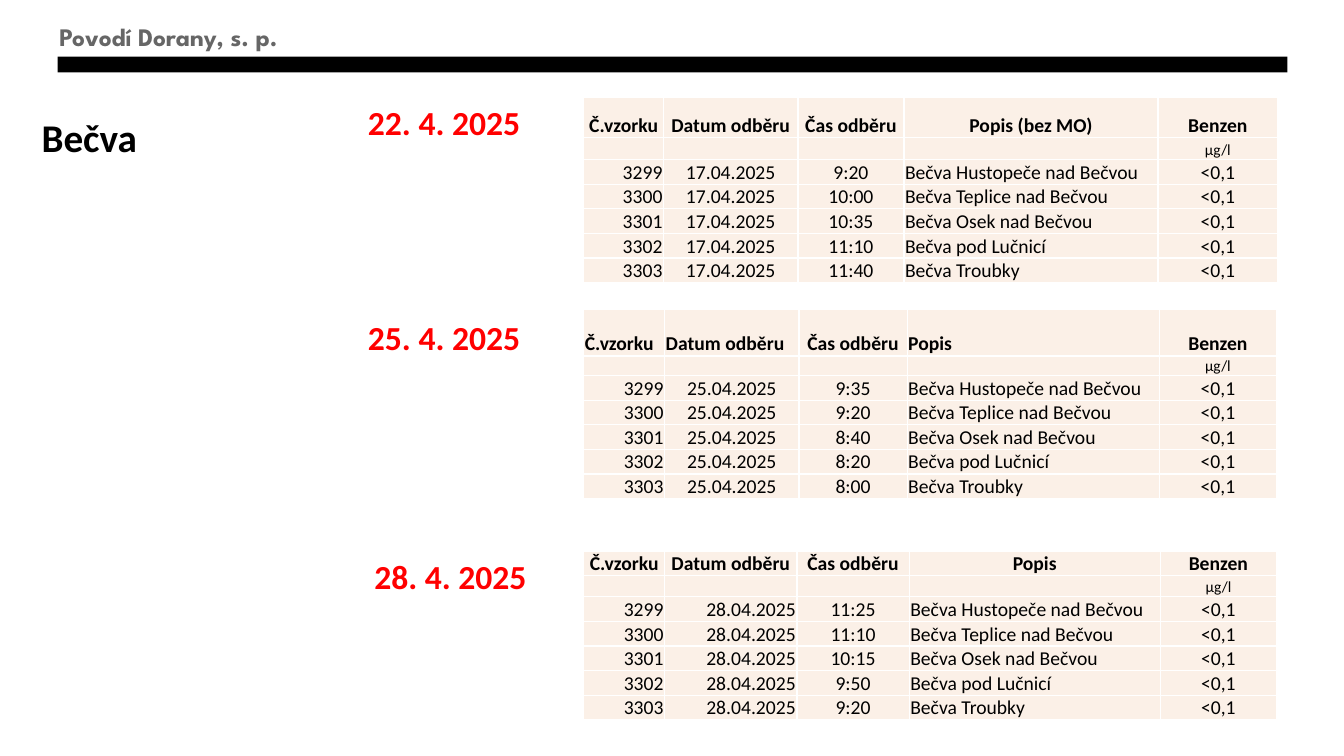
import pptx
import pptx.dml.color
import pptx.enum.shapes
import pptx.enum.text
import pptx.util
from lxml import etree

PX = 9525  # EMU in one px
NS = "{http://schemas.openxmlformats.org/drawingml/2006/main}"
ALIGN = {
    "l": pptx.enum.text.PP_ALIGN.LEFT,
    "c": pptx.enum.text.PP_ALIGN.CENTER,
    "r": pptx.enum.text.PP_ALIGN.RIGHT,
}
SITES = ["Bečva Hustopeče nad Bečvou", "Bečva Teplice nad Bečvou",
         "Bečva Osek nad Bečvou", "Bečva pod Lučnicí", "Bečva Troubky"]


def px(*nums):
    return [pptx.util.Emu(num * PX) for num in nums]


def color(hexa):
    return pptx.dml.color.RGBColor.from_string(hexa)


def style(para, size, hexa="000000", bold=True, face="Calibri", align="l"):
    para.alignment = ALIGN[align]
    font = para.font
    font.size = pptx.util.Pt(size)
    font.name = face
    font.bold = bold
    font.color.rgb = color(hexa)


def add_bar(slide, *box):
    bar = slide.shapes.add_shape(
        pptx.enum.shapes.MSO_SHAPE.RECTANGLE, *px(*box))
    bar.shadow.inherit = False
    bar.fill.solid()
    bar.fill.fore_color.rgb = color("000000")
    bar.line.fill.background()


def add_title(slide, text, *box):
    title = slide.shapes.title
    title.left, title.top, title.width, title.height = px(*box)
    frame = title.text_frame
    frame.text = text
    frame.vertical_anchor = pptx.enum.text.MSO_ANCHOR.TOP
    style(frame.paragraphs[0], 28)


def add_label(slide, text, box, size, hexa, face="Calibri"):
    frame = slide.shapes.add_textbox(*px(*box)).text_frame
    frame.word_wrap = True
    frame.text = text
    style(frame.paragraphs[0], size, hexa, face=face)


def add_edges(cell):
    props = cell._tc.get_or_add_tcPr()
    for spot, side in enumerate(("lnL", "lnR", "lnT", "lnB")):
        edge = etree.Element(NS + side, w="12700")
        fill = etree.SubElement(edge, NS + "solidFill")
        etree.SubElement(fill, NS + "srgbClr", val="FFFFFF")
        props.insert(spot, edge)


def fill_cell(cell, text, size, bold, align):
    cell.fill.solid()
    cell.fill.fore_color.rgb = color("FBF0E7")
    add_edges(cell)
    cell.margin_left, cell.margin_right, cell.margin_top = px(1, 1, 1)
    cell.margin_bottom = 0
    cell.vertical_anchor = pptx.enum.text.MSO_ANCHOR.BOTTOM
    cell.text = text
    para = cell.text_frame.paragraphs[0]
    style(para, size, bold=bold, align=align)
    if not text:
        # Keeps the empty cells of the unit row low
        etree.SubElement(para._p, NS + "endParaRPr", sz=str(size * 100))


def add_samples(slide, top, cols, rows, day, times, place, head, body):
    # Each row: text cells, size, bold, alignment
    lines = [
        (["Č.vzorku", "Datum odběru", "Čas odběru", place, "Benzen"],
         14, True, head),
        (["", "", "", "", "µg/l"], 11, False, "ccccc"),
    ]
    for num, (time, site) in enumerate(zip(times, SITES), 3299):
        lines.append(([str(num), day, time, site, "<0,1"], 14, False, body))

    table = slide.shapes.add_table(
        len(lines), len(cols), *px(556, top, sum(cols), sum(rows))).table
    table.first_row = False
    table.horz_banding = False
    for col, width in zip(table.columns, px(*cols)):
        col.width = width
    for row, high, line in zip(table.rows, px(*rows), lines):
        row.height = high
        texts, size, bold, aligns = line
        for cell, text, align in zip(row.cells, texts, aligns):
            fill_cell(cell, text, size, bold, align)


def main():
    deck = pptx.Presentation()
    deck.slide_width, deck.slide_height = px(1280, 720)
    slide = deck.slides.add_slide(deck.slide_layouts[5])

    # Page head
    add_bar(slide, 55, 54, 1171, 15)
    add_label(slide, "Povodí Dorany, s. p.", (47, 16, 640, 38), 18,
              "666666", "League Spartan")
    add_title(slide, "Bečva", 30, 103, 429, 154)

    # Sample tables
    add_samples(slide, 93, [76, 128, 101, 242, 114], [38, 21] + [23] * 5,
                "17.04.2025", ["9:20", "10:00", "10:35", "11:10", "11:40"],
                "Popis (bez MO)", "ccccc", "rcclc")
    add_samples(slide, 295, [77, 128, 103, 240, 112], [44, 18] + [23] * 5,
                "25.04.2025", ["9:35", "9:20", "8:40", "8:20", "8:00"],
                "Popis", "llclc", "rcclc")
    add_samples(slide, 525, [77, 126, 107, 239, 111], [20] * 7,
                "28.04.2025", ["11:25", "11:10", "10:15", "9:50", "9:20"],
                "Popis", "ccccc", "rrclc")

    # Dates beside the tables
    for text, left, top in (("22. 4. 2025", 341, 92),
                            ("25. 4. 2025", 341, 297),
                            ("28. 4. 2025", 347, 525)):
        add_label(slide, text, (left, top, 640, 48), 24, "FF0000")

    deck.save("out.pptx")


if __name__ == "__main__":
    main()
